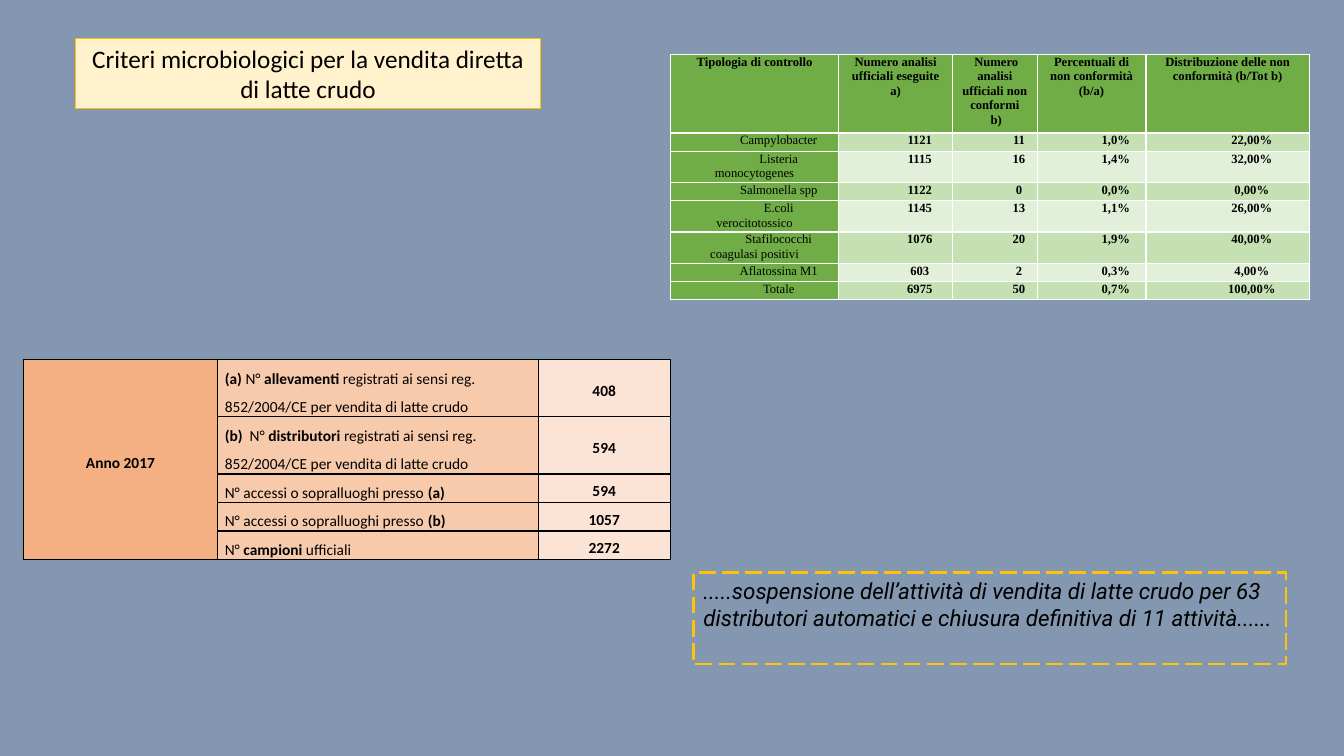
from dataclasses import dataclass

from lxml import etree
from pptx import Presentation
from pptx import util as u
from pptx.dml.color import RGBColor
from pptx.enum import dml, shapes, text
from pptx.oxml import ns

WIDE, HIGH = u.Inches(13.33), u.Inches(7.5)
MID, LEFT = text.PP_ALIGN.CENTER, text.PP_ALIGN.LEFT


@dataclass(frozen=True)
class Theme:
    back: str = "8497B0"
    ink: str = "000000"
    white: str = "FFFFFF"
    cream: str = "FFF2CC"
    gold: str = "FFC000"
    dash: str = "FFC208"
    peach: tuple = ("F4B083", "F7CAAC", "FBE4D5")
    green: str = "70AD47"
    bands: tuple = ("C5E0B3", "E2EFD9")
    sans: str = "Calibri"
    note: str = "Roboto"
    serif: str = "Times New Roman"
    head: int = 18
    body: int = 16
    data: int = 11
    small: int = 9


T = Theme()

YEAR = [
    ("(a)* N° *allevamenti* registrati ai sensi reg. 852/2004/CE per vendita di latte crudo", "408"),
    ("(b)*  N° *distributori* registrati ai sensi reg. 852/2004/CE per vendita di latte crudo", "594"),
    ("*N° accessi o sopralluoghi presso *(a)", "594"),
    ("*N° accessi o sopralluoghi presso *(b)", "1057"),
    ("*N° *campioni* ufficiali", "2272"),
]
HEADS = [
    ("Tipologia di controllo", -0.01),
    ("Numero analisi ufficiali eseguite\na)", -0.06),
    ("Numero analisi ufficiali non conformi\nb)", 0.03),
    ("Percentuali di non conformità (b/a)", -0.01),
    ("Distribuzione delle non conformità (b/Tot b)", 0),
]
TESTS = [
    ("Campylobacter", "1121", "11", "1,0%", "22,00%"),
    ("Listeria monocytogenes", "1115", "16", "1,4%", "32,00%"),
    ("Salmonella spp", "1122", "0", "0,0%", "0,00%"),
    ("E.coli verocitotossico", "1145", "13", "1,1%", "26,00%"),
    ("Stafilococchi coagulasi positivi", "1076", "20", "1,9%", "40,00%"),
    ("Aflatossina M1", "603", "2", "0,3%", "4,00%"),
    ("Totale", "6975", "50", "0,7%", "100,00%"),
]


def rgb(code):
    return RGBColor.from_string(code)


def across(pct):
    """Percentage of the slide's width."""
    return round(WIDE * pct / 100)


def down(pct):
    """Percentage of the slide's height."""
    return round(HIGH * pct / 100)


def place(shape, x, y, w, h):
    shape.left, shape.top = across(x), down(y)
    shape.width, shape.height = across(w), down(h)


def style(par, face, size, align=LEFT):
    par.alignment = align
    par.font.name, par.font.size = face, u.Pt(size)
    par.font.color.rgb = rgb(T.ink)


def edge(cell, color):
    props = cell._tc.get_or_add_tcPr()
    for i, side in enumerate(("lnL", "lnR", "lnT", "lnB")):
        line = etree.Element(ns.qn("a:" + side), w=str(u.Pt(1)))
        fill = etree.SubElement(line, ns.qn("a:solidFill"))
        etree.SubElement(fill, ns.qn("a:srgbClr"), val=color)
        props.insert(i, line)


def paint(cell, fill, line):
    cell.fill.solid()
    cell.fill.fore_color.rgb = rgb(fill)
    edge(cell, line)
    cell.margin_left = cell.margin_right = u.Inches(0.07)
    cell.margin_top = cell.margin_bottom = 0


def grid(slide, x, y, cols, rows):
    frame = slide.shapes.add_table(
        len(rows), len(cols), across(x), down(y), across(sum(cols)), down(sum(rows)))
    table = frame.table
    table.first_row = table.horz_banding = False
    for col, w in zip(table.columns, cols):
        col.width = across(w)
    for row, h in zip(table.rows, rows):
        row.height = down(h)
    return table


def rich(cell, words, align, gap):
    """Fill a year cell; asterisks switch from bold to regular and back."""
    par = cell.text_frame.paragraphs[0]
    for i, part in enumerate(words.split("*")):
        if part:
            run = par.add_run()
            run.text, run.font.bold = part, i % 2 == 0
    style(par, T.sans, T.data, align)
    par.line_spacing = gap
    cell.vertical_anchor = text.MSO_ANCHOR.MIDDLE


def plain(cell, words, bold, indent):
    cell.text = words
    for par in cell.text_frame.paragraphs:
        style(par, T.serif, T.small, MID)
        par.font.bold = bold
        par.line_spacing, par.space_after = 1.04, u.Pt(0.2)
        props = par._p.get_or_add_pPr()
        props.set("marL", "0")
        props.set("indent", str(u.Inches(indent)))


def title(slide):
    shape = slide.shapes.title
    place(shape, 5.63, 5.07, 34.58, 9.33)
    geom = etree.SubElement(shape._element.spPr, ns.qn("a:prstGeom"), prst="hexagon")
    etree.SubElement(geom, ns.qn("a:avLst"))
    shape.fill.solid()
    shape.fill.fore_color.rgb = rgb(T.cream)
    shape.line.color.rgb, shape.line.width = rgb(T.gold), u.Pt(0.5)
    frame = shape.text_frame
    frame.text = "Criteri microbiologici per la vendita diretta di latte crudo"
    frame.vertical_anchor = text.MSO_ANCHOR.MIDDLE
    frame.auto_size = text.MSO_AUTO_SIZE.NONE
    style(frame.paragraphs[0], T.sans, T.head, MID)


def note(slide):
    shape = slide.shapes.add_shape(shapes.MSO_SHAPE.RECTANGLE, 0, 0, 0, 0)
    place(shape, 51.6, 75.73, 44.11, 12.13)
    shape.shadow.inherit = False
    shape.fill.background()
    shape.line.color.rgb, shape.line.width = rgb(T.dash), u.Pt(1.5)
    shape.line.dash_style = dml.MSO_LINE.LONG_DASH
    frame = shape.text_frame
    frame.word_wrap = True
    frame.vertical_anchor = text.MSO_ANCHOR.TOP
    frame.text = (".....sospensione dell’attività di vendita di latte crudo per 63 "
                  "distributori automatici e chiusura definitiva di 11 attività......")
    style(frame.paragraphs[0], T.note, T.body)
    frame.paragraphs[0].font.italic = True


def year(slide):
    table = grid(slide, 1.73, 47.6, (14.47, 23.85, 9.82), [7.33] * 2 + [3.67] * 3)
    for r, (label, count) in enumerate(YEAR):
        for c, fill in enumerate(T.peach):
            paint(table.cell(r, c), fill, T.ink)
        rich(table.cell(r, 1), label, LEFT, 1.5)
        rich(table.cell(r, 2), count, MID, u.Pt(18))
    table.cell(0, 0).merge(table.cell(len(YEAR) - 1, 0))
    rich(table.cell(0, 0), "Anno 2017", MID, u.Pt(18))


def tests(slide):
    rows = [10.4] + [4.15 if len(row[0]) > 20 else 2.4 for row in TESTS]
    table = grid(slide, 49.88, 7.2, (12.52, 8.47, 6.3, 8.1, 12.15), rows)
    for c, (words, indent) in enumerate(HEADS):
        paint(table.cell(0, c), T.green, T.white)
        plain(table.cell(0, c), words, True, indent)
    for r, row in enumerate(TESTS):
        for c, words in enumerate(row):
            cell = table.cell(r + 1, c)
            paint(cell, T.bands[r % 2] if c else T.green, T.white)
            plain(cell, words, c > 0, 0.48)


def main():
    deck = Presentation()
    deck.slide_width, deck.slide_height = WIDE, HIGH
    slide = deck.slides.add_slide(deck.slide_layouts.get_by_name("Title Only"))
    slide.background.fill.solid()
    slide.background.fill.fore_color.rgb = rgb(T.back)
    title(slide)
    note(slide)
    year(slide)
    tests(slide)
    deck.save("out.pptx")


if __name__ == "__main__":
    main()
